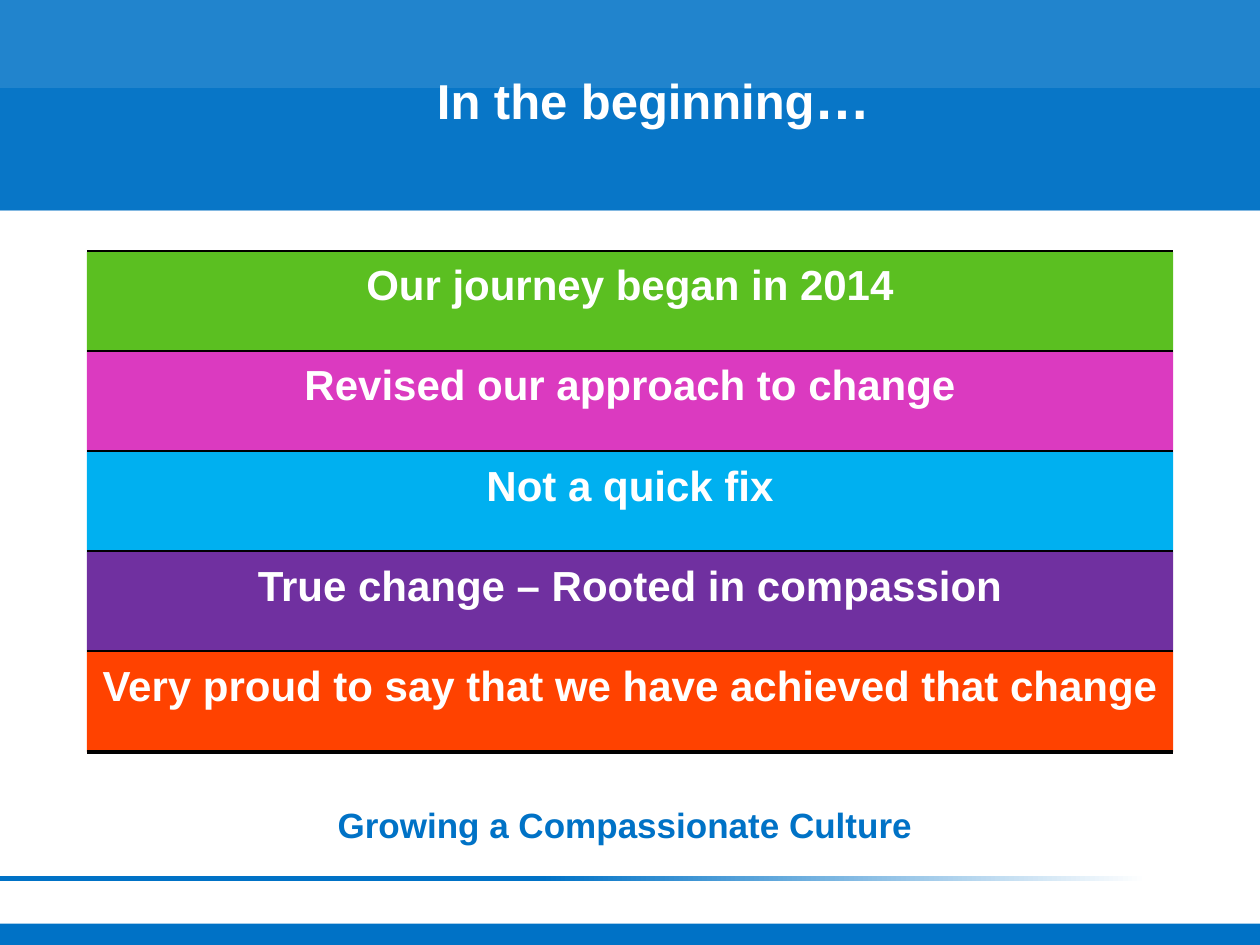
import pptx
import pptx.util
import pptx.dml.color
import pptx.enum.shapes
import pptx.enum.text
import pptx.oxml.ns
import lxml.etree

Inches = pptx.util.Inches
Pt = pptx.util.Pt
RECTANGLE = pptx.enum.shapes.MSO_SHAPE.RECTANGLE
ANCHOR = pptx.enum.text.MSO_ANCHOR
COLORS = {
    "blue": "0072C6", "white": "FFFFFF", "black": "000000", "green": "5BBF21",
    "pink": "DB3AC0", "sky": "00B0F0", "purple": "7030A0", "orange": "FF4200",
}
MESSAGES = [
    ("Our journey began in 2014", "green"),
    ("Revised our approach to change", "pink"),
    ("Not a quick fix", "sky"),
    ("True change – Rooted in compassion", "purple"),
    ("Very proud to say that we have achieved that change", "orange"),
]


def rgb(name):
    """Return the named colour."""
    return pptx.dml.color.RGBColor.from_string(COLORS[name])


def add_bar(slide, box, color, opacity=100):
    """Add a borderless rectangle in a solid, possibly translucent colour."""
    bar = slide.shapes.add_shape(RECTANGLE, *map(Inches, box))
    bar.shadow.inherit = False
    bar.line.fill.background()
    bar.fill.solid()
    bar.fill.fore_color.rgb = rgb(color)
    if opacity < 100:
        tint = bar.fill._xPr.find(".//" + pptx.oxml.ns.qn("a:srgbClr"))
        lxml.etree.SubElement(tint, pptx.oxml.ns.qn("a:alpha"), val=str(opacity * 1000))
    return bar


def write_line(frame, pieces, color, anchor, inset):
    """Write one centred bold line from (text, size) pieces."""
    layout = {"word_wrap": True, "auto_size": pptx.enum.text.MSO_AUTO_SIZE.NONE,
              "vertical_anchor": anchor}
    layout.update({"margin_" + side: Inches(inset)
                   for side in ("left", "top", "right", "bottom")})
    for key, value in layout.items():
        setattr(frame, key, value)
    paragraph = frame.paragraphs[0]
    paragraph.alignment = pptx.enum.text.PP_ALIGN.CENTER
    paragraph.line_spacing = 0.9
    for text, size in pieces:
        run = paragraph.add_run()
        run.text = text
        for key, value in {"name": "Arial", "size": Pt(size), "bold": True}.items():
            setattr(run.font, key, value)
        run.font.color.rgb = rgb(color)


def add_rule(slide, left, right, y):
    """Add a black horizontal rule."""
    rule = slide.shapes.add_connector(
        pptx.enum.shapes.MSO_CONNECTOR.STRAIGHT,
        Inches(left), Inches(y), Inches(right), Inches(y))
    rule.line.width = Pt(2)
    rule.line.color.rgb = rgb("black")
    lxml.etree.SubElement(rule._element.spPr, pptx.oxml.ns.qn("a:effectLst"))


def add_header(slide, left, top, width, height):
    """Build the two-tone title band."""
    add_bar(slide, (left, top, width, height), "blue", 87)
    add_bar(slide, (left, top + 0.7, width, height - 0.7), "blue", 75)
    title = slide.shapes.title
    slide.shapes._spTree.append(title._element)
    place = {"left": 0.88, "top": 0.08, "width": 8.62, "height": 1.45}
    origin = {"left": left, "top": top}
    for key, value in place.items():
        setattr(title, key, Inches(value + origin.get(key, 0)))
    write_line(title.text_frame, [("In the beginning", 28), ("…", 32)],
               "white", ANCHOR.MIDDLE, 0.1)


def add_messages(slide, left, top, width, height):
    """Stack the coloured messages, each under a rule, and close with a rule."""
    step = height / len(MESSAGES)
    for index, (message, color) in enumerate(MESSAGES):
        y = top + index * step
        add_rule(slide, left, left + width, y)
        bar = add_bar(slide, (left, y, width, step), color)
        write_line(bar.text_frame, [(message, 24)], "white", ANCHOR.TOP, 0.1)
    add_rule(slide, left, left + width, top + height)


def add_footer(slide, left, top, width, height):
    """Build the tagline, the fading rule and the bottom band."""
    tagline = slide.shapes.add_textbox(
        Inches(left + 0.65), Inches(top), Inches(width - 1.38), Inches(0.45))
    write_line(tagline.text_frame, [("Growing a Compassionate Culture", 20)],
               "blue", ANCHOR.MIDDLE, 0.07)
    fade = add_bar(slide, (left, top + 0.61, width, 0.04), "blue")
    fade.fill.gradient()
    fade.fill.gradient_angle = 0
    for stop, (position, color) in zip(fade.fill.gradient_stops,
                                       [(0.43, "blue"), (0.91, "white")]):
        stop.position = position
        stop.color.rgb = rgb(color)
    add_bar(slide, (left, top + height - 0.17, width, 0.17), "blue")


def main():
    """Build and save the presentation."""
    deck = pptx.Presentation()
    deck.slide_width, deck.slide_height = Inches(10), Inches(7.5)
    slide = deck.slides.add_slide(deck.slide_layouts.get_by_name("Title Only"))
    add_header(slide, 0, 0, 10, 1.67)
    add_messages(slide, 0.69, 2, 8.62, 3.97)
    add_footer(slide, 0, 6.34, 10, 1.16)
    deck.save("out.pptx")


if __name__ == "__main__":
    main()
